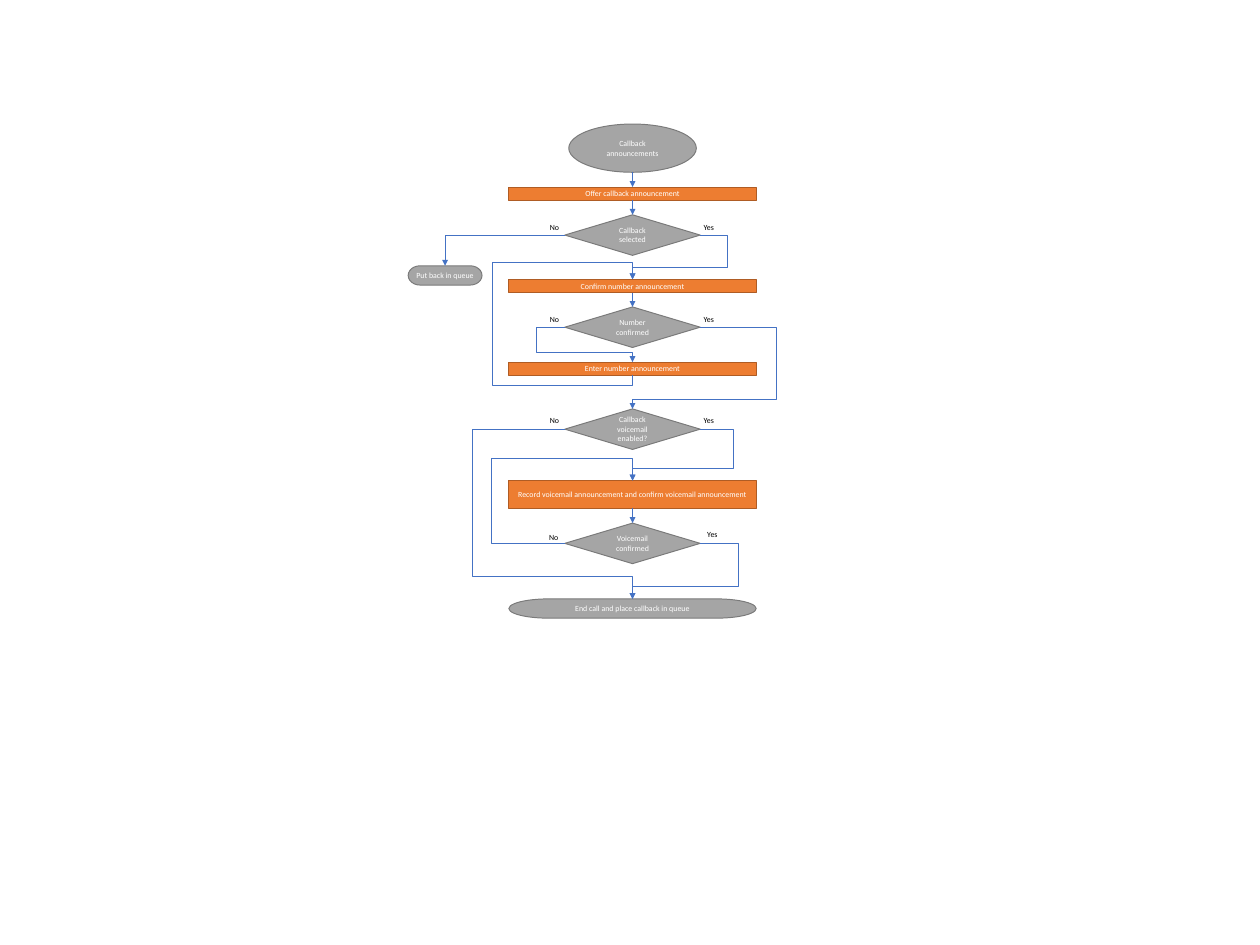
from dataclasses import dataclass

from lxml.etree import SubElement
from pptx import Presentation
from pptx.dml.color import RGBColor
from pptx.enum.shapes import MSO_CONNECTOR, MSO_SHAPE
from pptx.enum.text import MSO_ANCHOR, MSO_AUTO_SIZE, PP_ALIGN
from pptx.oxml.ns import qn
from pptx.util import Pt


@dataclass(frozen=True)
class Theme:
    """Colours, type and line widths of the flowchart."""

    font: str = "Calibri"
    size: float = 8
    step: tuple = ("ED7D31", "AF5C24")
    node: tuple = ("A5A5A5", "7A7A7A")
    flow: str = "4472C4"
    on_fill: str = "FFFFFF"
    label: str = "000000"
    outline: float = 1
    flow_width: float = 0.5


THEME = Theme()
AXIS = 642.6
TOP, LEFT, BOTTOM, RIGHT = range(4)
TIGHT = {"margin_left": Pt(4.3), "margin_right": Pt(4.3),
         "margin_top": Pt(2.2), "margin_bottom": Pt(2.2)}


def apply_format(target, values):
    """Set each named attribute on the target."""
    for name, value in values.items():
        setattr(target, name, value)


def write(frame, wording, colour, align, frame_format):
    """Fill a text frame with one formatted paragraph."""
    apply_format(frame, {"word_wrap": True, **frame_format})
    paragraph = frame.paragraphs[0]
    paragraph.alignment = align
    run = paragraph.add_run()
    run.text = wording
    apply_format(run.font, {"name": THEME.font, "size": Pt(THEME.size)})
    run.font.color.rgb = RGBColor.from_string(colour)


def add_box(slide, kind, wording, top, width, height, colours=THEME.node,
            centre=AXIS, insets=None):
    """Add a flowchart shape centred on a vertical axis."""
    box = slide.shapes.add_shape(
        kind, Pt(centre - width / 2), Pt(top), Pt(width), Pt(height))
    box.shadow.inherit = False
    box.fill.solid()
    box.fill.fore_color.rgb, box.line.color.rgb = map(RGBColor.from_string, colours)
    box.line.width = Pt(THEME.outline)
    write(box.text_frame, wording, THEME.on_fill, PP_ALIGN.CENTER,
          {"vertical_anchor": MSO_ANCHOR.MIDDLE, **(insets or {})})
    return box


def add_step(slide, wording, top, height=13.6):
    """Add an announcement bar."""
    return add_box(slide, MSO_SHAPE.FLOWCHART_PROCESS, wording, top, 251.2, height,
                   THEME.step)


def add_decision(slide, wording, top):
    """Add a decision diamond."""
    return add_box(slide, MSO_SHAPE.FLOWCHART_DECISION, wording, top, 137.6, 41.2)


def add_terminator(slide, wording, top, width, centre=AXIS):
    """Add a rounded end point."""
    return add_box(slide, MSO_SHAPE.FLOWCHART_TERMINATOR, wording, top, width, 19.6,
                   centre=centre, insets=TIGHT)


def add_label(slide, wording, left, top):
    """Add a Yes or No branch label."""
    label = slide.shapes.add_textbox(Pt(left), Pt(top), Pt(52.6), Pt(17))
    write(label.text_frame, wording, THEME.label, PP_ALIGN.LEFT,
          {"auto_size": MSO_AUTO_SIZE.SHAPE_TO_FIT_TEXT})


def style_flow(line):
    """Give a flow line its colour, width and arrowhead."""
    line.color.rgb = RGBColor.from_string(THEME.flow)
    line.width = Pt(THEME.flow_width)
    SubElement(line._get_or_add_ln(), qn("a:tailEnd"), type="triangle")


def site(box, side):
    """Return the middle of one side of a box."""
    middle_x, middle_y = box.left + box.width // 2, box.top + box.height // 2
    return {TOP: (middle_x, box.top), LEFT: (box.left, middle_y),
            BOTTOM: (middle_x, box.top + box.height),
            RIGHT: (box.left + box.width, middle_y)}[side]


def add_flow(slide, source, target, side=BOTTOM, lane=None):
    """Connect a side of the source to the target's top, by a lane (x, y) if given."""
    start, end = site(source, side), site(target, TOP)
    kind = MSO_CONNECTOR.STRAIGHT if side == BOTTOM else MSO_CONNECTOR.ELBOW
    flow = slide.shapes.add_connector(kind, *start, *end)
    if source.auto_shape_type != MSO_SHAPE.FLOWCHART_CONNECTOR:
        flow.begin_connect(source, side)
    flow.end_connect(target, TOP)
    if kind == MSO_CONNECTOR.ELBOW:
        geometry = flow._element.spPr.find(qn("a:prstGeom"))
        geometry.set("prst", "bentConnector4" if lane else "bentConnector2")
        guides = geometry.find(qn("a:avLst"))
        for number, (stop, first, last) in enumerate(zip(lane or (), start, end), 1):
            ratio = round((Pt(stop) - first) / (last - first) * 100000)
            SubElement(guides, qn("a:gd"), name=f"adj{number}", fmla=f"val {ratio}")
    style_flow(flow.line)
    SubElement(flow._element.spPr, qn("a:effectLst"))


def add_return_loop(slide, source, target, below, left, above):
    """Lead from the source's bottom around the left to the target's top."""
    start, end = site(source, BOTTOM), site(target, TOP)
    builder = slide.shapes.build_freeform(*start)
    builder.add_line_segments(
        [(start[0], Pt(below)), (Pt(left), Pt(below)), (Pt(left), Pt(above)),
         (end[0], Pt(above)), end], close=False)
    loop = builder.convert_to_shape()
    loop.shadow.inherit = False
    loop.fill.background()
    style_flow(loop.line)


def main():
    """Build the callback flowchart."""
    deck = Presentation()
    apply_format(deck, {"slide_width": Pt(1280), "slide_height": Pt(960)})
    slide = deck.slides.add_slide(deck.slide_layouts[6])

    start = add_box(slide, MSO_SHAPE.FLOWCHART_CONNECTOR, "Callback announcements",
                    126, 129.6, 49)
    offer = add_step(slide, "Offer callback announcement", 190)
    selected = add_decision(slide, "Callback selected", 218.2)
    requeue = add_terminator(slide, "Put back in queue", 270, 75, 452.2)
    confirm = add_step(slide, "Confirm number announcement", 283.7)
    confirmed = add_decision(slide, "Number confirmed", 311.8)
    enter = add_step(slide, "Enter number announcement", 367.9)
    enabled = add_decision(slide, "Callback voicemail enabled?", 415.4)
    record = add_step(
        slide, "Record voicemail announcement and confirm voicemail announcement",
        488.2, 28.2)
    recorded = add_decision(slide, "Voicemail confirmed", 531.4)
    finish = add_terminator(slide, "End call and place callback in queue", 608.4, 251.2)

    for source, target in ((start, offer), (offer, selected), (confirm, confirmed),
                           (record, recorded)):
        add_flow(slide, source, target)
    for source, target, side, lane in (
            (selected, requeue, LEFT, None),
            (selected, confirm, RIGHT, (738.7, 271.4)),
            (confirmed, enter, LEFT, (545, 357.8)),
            (confirmed, enabled, RIGHT, (788.4, 405.4)),
            (enabled, finish, LEFT, (479.5, 585.4)),
            (enabled, record, RIGHT, (744.5, 475.9)),
            (recorded, record, LEFT, (499, 465.1)),
            (recorded, finish, RIGHT, (749.5, 595.4))):
        add_flow(slide, source, target, side, lane)
    add_return_loop(slide, enter, confirm, 391.7, 499.7, 266.4)

    for wording, left, top in (
            ("No", 551.5, 222.5), ("Yes", 707.8, 222.5),
            ("No", 551.5, 316.4), ("Yes", 707.8, 316.1),
            ("No", 551.5, 419), ("Yes", 707.8, 419),
            ("No", 550.8, 537.1), ("Yes", 711.4, 535)):
        add_label(slide, wording, left, top)

    deck.save("out.pptx")


if __name__ == "__main__":
    main()
